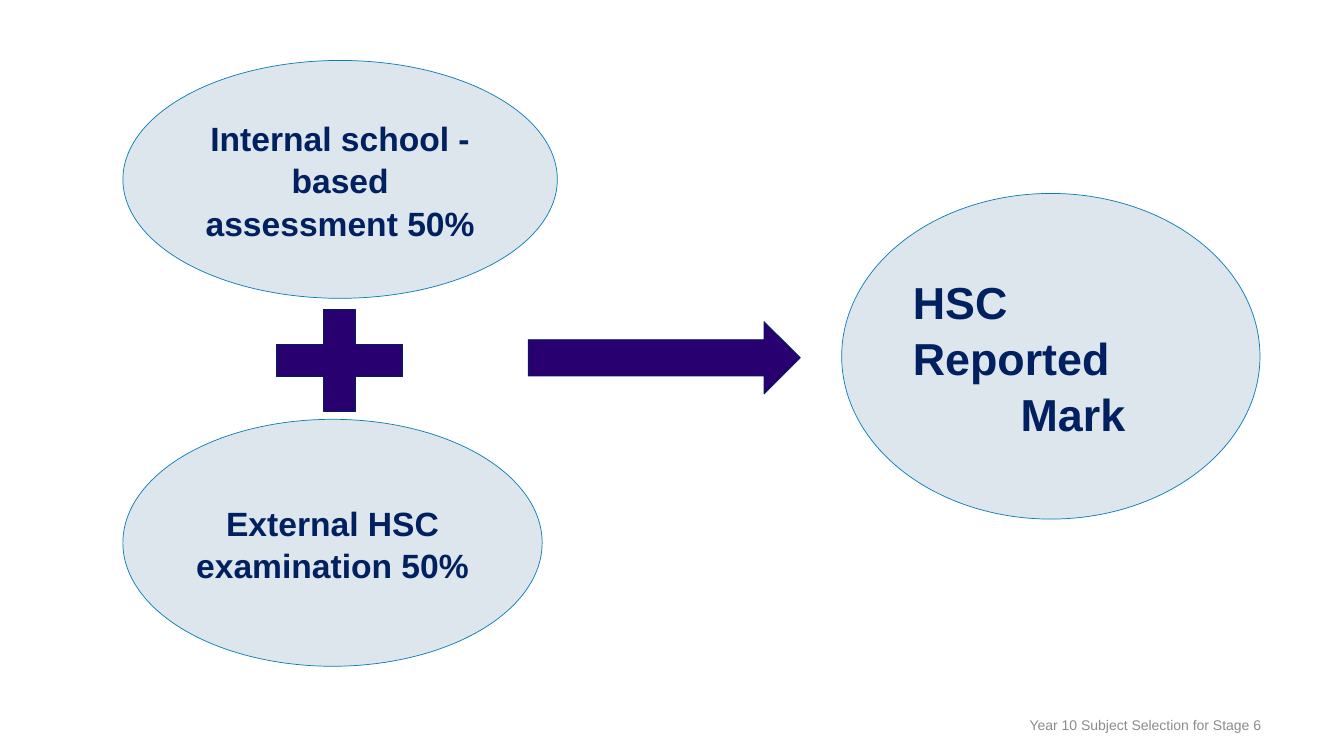
from dataclasses import dataclass
from pptx import Presentation
from pptx.dml.color import RGBColor
from pptx.enum.shapes import MSO_SHAPE
from pptx.enum.text import MSO_ANCHOR, PP_ALIGN
from pptx.util import Pt


@dataclass(frozen=True)
class Theme:
    font: str = "Arial"
    pale: str = "DDE5ED"
    edge: str = "0A7CB9"
    navy: str = "002060"
    dark: str = "280070"
    gray: str = "8C8C8C"
    body: int = 24
    mark: int = 32
    foot: int = 10
    line: float = 0.5
    lead: float = 1.05


THEME = Theme()


def style(para, size, color, bold, align):
    para.alignment = align
    for run in para.runs:
        font = run.font
        font.name, font.size, font.bold = THEME.font, Pt(size), bold
        font.color.rgb = RGBColor.from_string(color)


def draw(shapes, kind, box, fill, edge):
    shape = shapes.add_shape(kind, *map(Pt, box))
    shape.shadow.inherit = False
    shape.fill.solid()
    shape.fill.fore_color.rgb = RGBColor.from_string(fill)
    shape.line.color.rgb = RGBColor.from_string(edge)
    shape.line.width = Pt(THEME.line)
    return shape


def oval(shapes, box, text, size, align=PP_ALIGN.CENTER):
    shape = draw(shapes, MSO_SHAPE.OVAL, box, THEME.pale, THEME.edge)
    frame = shape.text_frame
    frame.word_wrap = True
    frame.vertical_anchor = MSO_ANCHOR.MIDDLE
    frame.text = text
    for para in frame.paragraphs:
        para.line_spacing = THEME.lead
        style(para, size, THEME.navy, True, align)
    return frame


def inputs(shapes, box):
    left, top, width, height = box
    oval(shapes, (left, top + 256.3, 299.5, 176.4),
         "External HSC examination 50%", THEME.body)
    draw(shapes, MSO_SHAPE.MATH_PLUS, (left + 93.6, top + 164.9, 122.4, 98.6),
         THEME.dark, THEME.navy)
    oval(shapes, (left, top, width, 169.9),
         "Internal school - based assessment 50%", THEME.body)


def result(shapes, box):
    left, top, width, height = box
    draw(shapes, MSO_SHAPE.RIGHT_ARROW, (left, top + 91.5, 194.4, 51.8),
         THEME.dark, THEME.navy)
    frame = oval(shapes, (left + 223.9, top, width - 223.9, height),
                 "HSC\nReported\nMark", THEME.mark, PP_ALIGN.LEFT)
    last = frame.paragraphs[-1]._p.get_or_add_pPr()
    last.set("marL", str(Pt(77)))
    last.set("indent", "0")


def footer(shapes, box):
    frame = shapes.add_textbox(*map(Pt, box)).text_frame
    frame.word_wrap = True
    frame.vertical_anchor = MSO_ANCHOR.BOTTOM
    frame.margin_left = frame.margin_right = 0
    frame.margin_top = frame.margin_bottom = 0
    frame.text = "Year 10 Subject Selection for Stage 6"
    style(frame.paragraphs[0], THEME.foot, THEME.gray, False, PP_ALIGN.RIGHT)


def main():
    deck = Presentation()
    deck.slide_width, deck.slide_height = Pt(960), Pt(540)
    slide = deck.slides.add_slide(deck.slide_layouts[6])
    group = slide.shapes.add_group_shape()
    inputs(group.shapes, (87.8, 43.2, 310.3, 432.7))
    result(group.shapes, (377.3, 138.2, 522.7, 232.6))
    footer(slide.shapes, (576.7, 511.9, 324, 12.2))
    deck.save("out.pptx")


if __name__ == "__main__":
    main()
